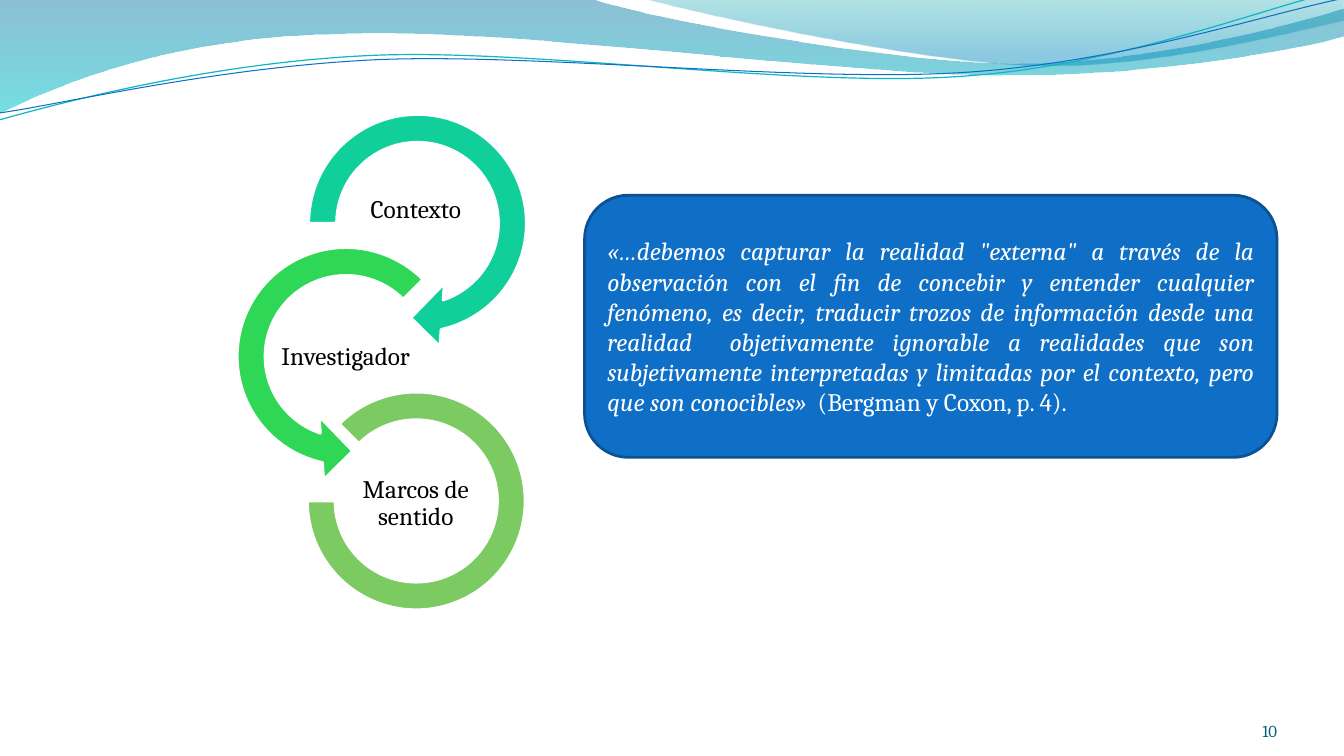
from dataclasses import dataclass
from typing import Optional

from lxml.etree import SubElement
from pptx import Presentation
from pptx.dml.color import RGBColor
from pptx.enum.shapes import MSO_SHAPE as Preset
from pptx.enum.text import MSO_ANCHOR as Anchor, PP_ALIGN as Align
from pptx.oxml.ns import qn
from pptx.util import Pt

FONT = "Cambria"
WHITE = RGBColor(0xFF, 0xFF, 0xFF)
BLACK = RGBColor(0, 0, 0)
BLUE = RGBColor(0x0F, 0x6F, 0xC6)
DARK_BLUE = RGBColor(0x0B, 0x52, 0x92)
NUMBER_BLUE = RGBColor(0x04, 0x5D, 0x75)
LINE_TEAL = RGBColor(0x0A, 0xB8, 0xBF)
TURQUOISE = RGBColor(0x10, 0xCF, 0x9B)
GREEN = RGBColor(0x2F, 0xD7, 0x57)
OLIVE = RGBColor(0x7C, 0xCA, 0x62)

Point = tuple[float, float]


@dataclass
class Stop:
    position: float
    color: RGBColor
    opacity: int


@dataclass
class Wave:
    """Each step is one point (a line) or three points (a Bézier curve)."""
    start: Point
    steps: list[tuple[Point, ...]]
    stops: tuple[Stop, ...] = ()
    line_color: Optional[RGBColor] = None
    line_width: float = 0


@dataclass
class Ring:
    preset: Preset
    left: float
    top: float
    size: float
    adjustments: tuple[float, ...]
    color: RGBColor
    label: str
    label_left: float
    label_top: float


WAVES = [
    Wave((0, 0), [
        ((422.6, -0.7),),
        ((456.5, 12.2), (637.2, 45.4), (727.9, 45.4)),
        ((819.4, 45.4), (920.2, 18.7), (959.8, 6.5)),
        ((961.2, 25.9),),
        ((943.9, 31.7), (835.2, 54.7), (715.7, 54)),
        ((596.9, 54), (366.5, 20.2), (247, 24.5)),
        ((123.8, 25.9), (43.9, 59.8), (-0.7, 81.4)),
    ], stops=(Stop(0, RGBColor(0x00, 0x74, 0xA1), 45),
              Stop(1, RGBColor(0x00, 0xC6, 0xCF), 55))),
    Wave((460, -0.7), [
        ((488.9, 7.9), (654.5, 44.6), (738, 46.8)),
        ((821.5, 49.7), (923, 23), (959.8, 15.1)),
        ((959.8, 0),),
    ], stops=(Stop(0, RGBColor(0x00, 0xA1, 0xA9), 30),
              Stop(0.8, RGBColor(0x00, 0x8B, 0xBF), 45))),
    Wave((-0.7, 85.7), [
        ((46.1, 72.7), (151.9, 44.6), (265.7, 39.6)),
        ((379.4, 34.6), (568.8, 62.6), (684, 54.7)),
        ((799.2, 47.5), (901.4, 5.8), (958.3, -7.2)),
    ], line_color=LINE_TEAL, line_width=0.85),
    Wave((0, 80.6), [
        ((45.4, 74.2), (157, 47.5), (272.2, 42.5)),
        ((386.6, 38.2), (573.1, 59), (687.6, 51.8)),
        ((802.8, 44.6), (903.6, 10.1), (960.5, -1.4)),
    ], line_color=BLUE, line_width=0.75),
]

RINGS = [
    Ring(Preset.CIRCULAR_ARROW, 207.9, 69.1, 180.7, (0.11, 11.42, 45, 108, 0.125),
         TURQUOISE, "Contexto", 247, 125.3),
    Ring(Preset.LEFT_CIRCULAR_ARROW, 156.8, 164.2, 180.7, (0.11, 11.42, 63, 189, 0.125),
         GREEN, "Investigador", 197, 230),
    Ring(Preset.BLOCK_ARC, 219.6, 280.1, 155.5, (135, 108, 0.127),
         OLIVE, "Marcos de sentido", 247, 334.8),
]

QUOTE = ("«…debemos capturar la realidad \"externa\" a través de la observación con el "
         "fin de concebir y entender cualquier fenómeno, es decir, traducir trozos de "
         "información desde una realidad  objetivamente ignorable a realidades que son "
         "subjetivamente interpretadas y limitadas por el contexto, pero que son conocibles» ")
CITATION = " (Bergman y Coxon, p. 4)."


def bend_curves(shape, steps: list[tuple[Point, ...]]) -> None:
    """Join the three segments of every curved step into one Bézier curve."""
    outline = next(shape.element.iter(qn("a:path")))
    segments = iter(outline.findall(qn("a:lnTo")))
    for step in steps:
        parts = [next(segments) for _ in step]
        if len(parts) == 1:
            continue
        curve = SubElement(outline, qn("a:cubicBezTo"))
        parts[0].addprevious(curve)
        for part in parts:
            curve.append(part[0])
            outline.remove(part)


def draw_wave(slide, wave: Wave) -> None:
    builder = slide.shapes.build_freeform(*map(Pt, wave.start))
    builder.add_line_segments([(Pt(x), Pt(y)) for step in wave.steps for x, y in step],
                              close=bool(wave.stops))
    shape = builder.convert_to_shape()
    bend_curves(shape, wave.steps)
    shape.shadow.inherit = False
    if not wave.stops:
        shape.fill.background()
        shape.line.color.rgb = wave.line_color
        shape.line.width = Pt(wave.line_width)
        return
    shape.line.fill.background()
    shape.fill.gradient()
    shape.fill.gradient_angle = 270
    for gradient_stop, stop in zip(shape.fill.gradient_stops, wave.stops):
        gradient_stop.position = stop.position
        gradient_stop.color.rgb = stop.color
    # Opacity of each gradient colour
    for color, stop in zip(shape.element.iter(qn("a:srgbClr")), wave.stops):
        SubElement(color, qn("a:alpha")).set("val", str(stop.opacity * 1000))


def add_run(paragraph, text: str, size: float, color: RGBColor, italic: bool = False) -> None:
    run = paragraph.add_run()
    run.text = text
    run.font.name = FONT
    run.font.size = Pt(size)
    run.font.color.rgb = color
    run.font.italic = italic


def add_text(slide, box: tuple[float, ...], text: str, size: float, color: RGBColor,
             align: Align, anchor: Anchor, inset: float, spacing: float = 1) -> None:
    frame = slide.shapes.add_textbox(*map(Pt, box)).text_frame
    frame.word_wrap = True
    frame.vertical_anchor = anchor
    frame.margin_left = frame.margin_right = Pt(inset)
    frame.margin_top = frame.margin_bottom = Pt(inset)
    paragraph = frame.paragraphs[0]
    paragraph.alignment = align
    paragraph.line_spacing = spacing
    add_run(paragraph, text, size, color)


def add_preset(slide, preset: Preset, box: tuple[float, ...], fill: RGBColor, line: RGBColor):
    shape = slide.shapes.add_shape(preset, *map(Pt, box))
    shape.shadow.inherit = False
    shape.fill.solid()
    shape.fill.fore_color.rgb = fill
    shape.line.color.rgb = line
    shape.line.width = Pt(2)
    return shape


def draw_ring(slide, ring: Ring) -> None:
    shape = add_preset(slide, ring.preset, (ring.left, ring.top, ring.size, ring.size),
                       ring.color, WHITE)
    for index, value in enumerate(ring.adjustments):
        shape.adjustments[index] = value
    add_text(slide, (ring.label_left, ring.label_top, 100, 50.4), ring.label, 18, BLACK,
             Align.CENTER, Anchor.MIDDLE, 0.9, 0.9)


def draw_quote(slide) -> None:
    shape = add_preset(slide, Preset.ROUNDED_RECTANGLE, (417.6, 139.5, 494.6, 187.2),
                       BLUE, DARK_BLUE)
    frame = shape.text_frame
    frame.word_wrap = True
    frame.vertical_anchor = Anchor.MIDDLE
    paragraph = frame.paragraphs[0]
    paragraph.alignment = Align.JUSTIFY
    add_run(paragraph, QUOTE, 18, WHITE, italic=True)
    add_run(paragraph, CITATION, 18, WHITE)


def main() -> None:
    presentation = Presentation()
    presentation.slide_width, presentation.slide_height = Pt(960), Pt(540)
    slide = presentation.slides.add_slide(presentation.slide_layouts[6])

    # Header waves
    for wave in WAVES:
        draw_wave(slide, wave)
    # Slide number
    add_text(slide, (832.3, 500.4, 79.9, 28.8), "10", 12, NUMBER_BLUE,
             Align.RIGHT, Anchor.BOTTOM, 0)
    # Linked rings and quotation
    for ring in RINGS:
        draw_ring(slide, ring)
    draw_quote(slide)

    presentation.save("out.pptx")


if __name__ == "__main__":
    main()
